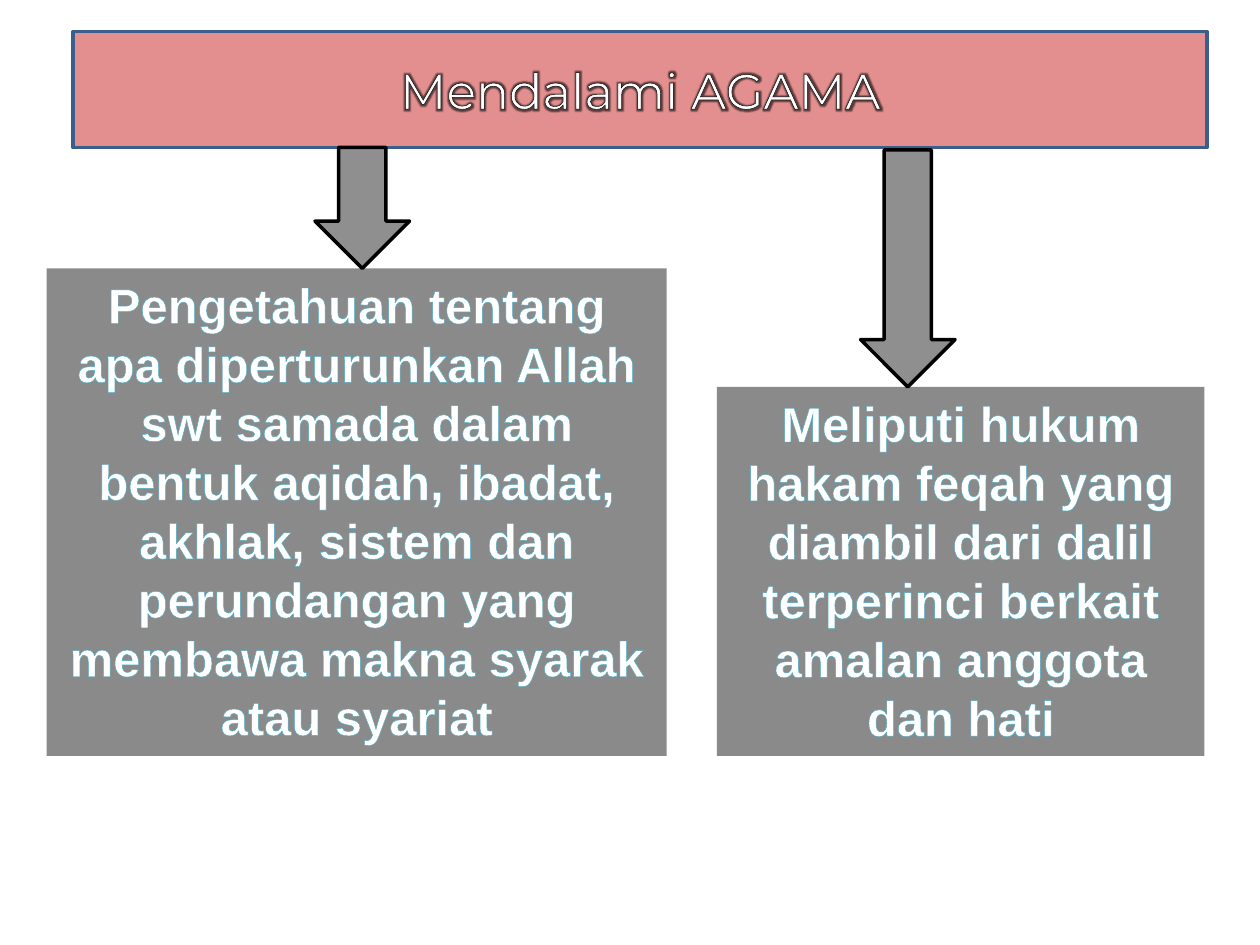
from lxml.etree import SubElement as Sub
from pptx import Presentation
from pptx.dml.color import RGBColor as RGB
from pptx.enum.shapes import MSO_SHAPE as SHAPE
from pptx.enum.text import MSO_ANCHOR as ANCHOR, MSO_AUTO_SIZE as AUTO, PP_ALIGN as ALIGN
from pptx.oxml import parse_xml
from pptx.oxml.ns import nsdecls, qn
from pptx.util import Inches, Pt

COLORS = {"red": "C00000", "black": "000000", "white": "FFFFFF",
          "navy": "3A5F8C", "teal": "4BACC6"}
TITLE = {"size": Pt(28), "name": "Montserrat", "bold": False}
BODY = {"size": Pt(28), "name": "Arial", "bold": True}

# Text box: words, left, top, width, height
BOXES = [
    ("Pengetahuan tentang apa diperturunkan Allah swt samada dalam bentuk "
     "aqidah, ibadat, akhlak, sistem dan perundangan yang membawa makna "
     "syarak atau syariat", 0.37, 2.13, 4.92, 3.87),
    ("Meliputi hukum hakam feqah yang diambil dari dalil terperinci berkait "
     "amalan anggota dan hati", 5.69, 3.07, 3.87, 2.93),
]
# Arrow: left, top; each ends at the top of its box
ARROWS = [(2.5, 1.17), (6.83, 1.19)]


def rgb(name):
    return RGB.from_string(COLORS[name])


def paint(shape, fill, alpha, line=None):
    """Give a shape a see-through fill and an optional border."""
    shape.shadow.inherit = False
    shape.fill.solid()
    shape.fill.fore_color.rgb = rgb(fill)
    tone = shape.fill._xPr.find(qn("a:solidFill"))[0]
    Sub(tone, qn("a:alpha"), val=str(alpha * 1000))
    if line:
        shape.line.color.rgb = rgb(line)
        shape.line.width = Pt(2)
    else:
        shape.line.fill.background()


def write(shape, words, style, edge, width, anchor, fit):
    """Write centred white text with a coloured outline."""
    frame = shape.text_frame
    frame.word_wrap = True
    frame.auto_size = fit
    frame.vertical_anchor = anchor
    para = frame.paragraphs[0]
    para.alignment = ALIGN.CENTER
    run = para.add_run()
    run.text = words
    for key, value in style.items():
        setattr(run.font, key, value)
    run.font.color.rgb = rgb("white")
    run.font._element.insert(0, parse_xml(
        f'<a:ln {nsdecls("a")} w="{Pt(width)}"><a:solidFill>'
        f'<a:srgbClr val="{COLORS[edge]}"/></a:solidFill></a:ln>'))
    return run


def add_glow(run):
    """Put a soft dark glow behind the letters."""
    fill = run.font._element.find(qn("a:solidFill"))
    fill.addnext(parse_xml(
        f'<a:effectLst {nsdecls("a")}><a:glow rad="{Pt(4)}">'
        f'<a:srgbClr val="{COLORS["black"]}"><a:alpha val="60000"/>'
        '</a:srgbClr></a:glow></a:effectLst>'))


def add_title(slide, words):
    title = slide.shapes.title
    title.left, title.top = Inches(0.58), Inches(0.25)
    title.width, title.height = Inches(9), Inches(0.92)
    # Turn the title frame into a plaque
    geom = Sub(title._element.spPr, qn("a:prstGeom"), prst="plaque")
    Sub(geom, qn("a:avLst"))
    paint(title, "red", 44, "navy")
    add_glow(write(title, words, TITLE, "black", 0.75, ANCHOR.MIDDLE, AUTO.NONE))


def add_box(slide, words, *place):
    box = slide.shapes.add_shape(SHAPE.RECTANGLE, *map(Inches, place))
    paint(box, "black", 46)
    write(box, words, BODY, "teal", 0.8, ANCHOR.TOP, AUTO.SHAPE_TO_FIT_TEXT)


def add_arrow(slide, left, top, end):
    arrow = slide.shapes.add_shape(
        SHAPE.DOWN_ARROW, *map(Inches, (left, top, 0.75, end - top)))
    paint(arrow, "black", 44, "black")


def main():
    deck = Presentation()
    deck.slide_width, deck.slide_height = Inches(10), Inches(7.5)
    slide = deck.slides.add_slide(deck.slide_layouts[5])
    add_title(slide, "Mendalami AGAMA")
    for box in BOXES:
        add_box(slide, *box)
    for (left, top), box in zip(ARROWS, BOXES):
        add_arrow(slide, left, top, box[2])
    deck.save("out.pptx")


if __name__ == "__main__":
    main()
